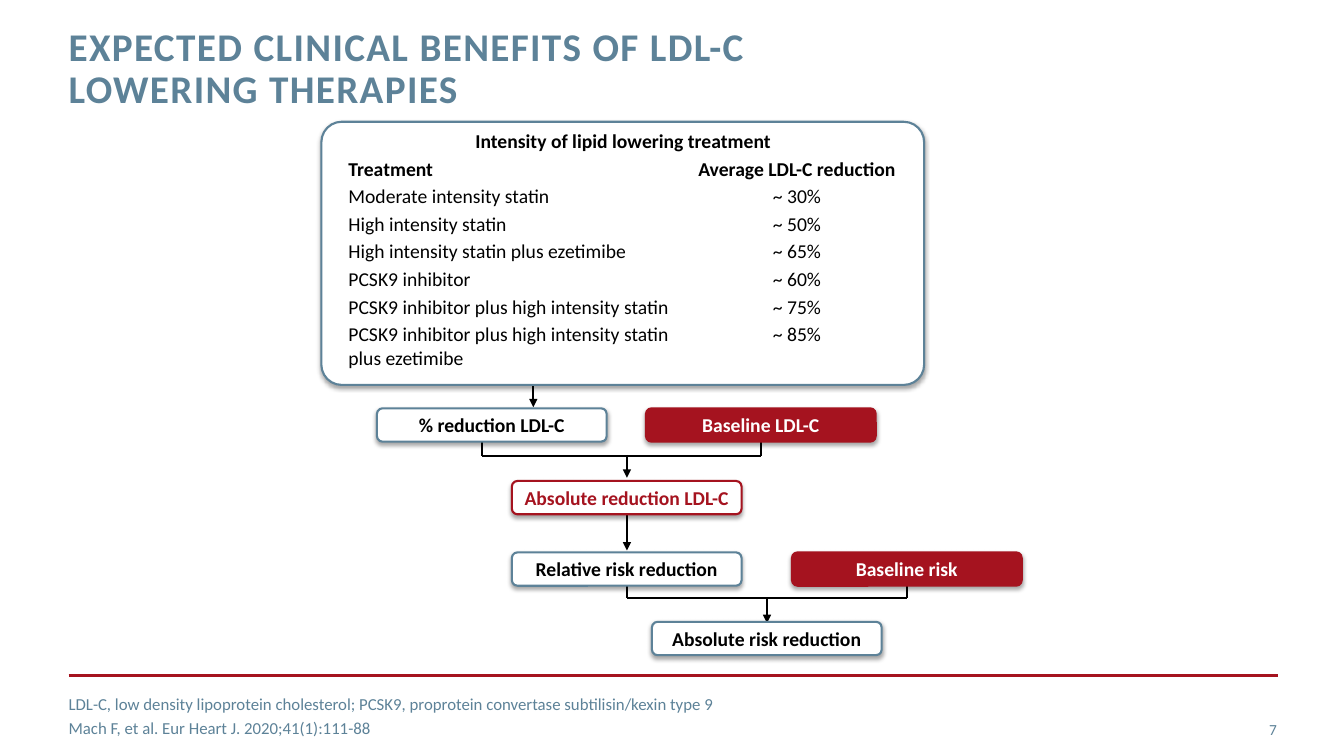
from lxml.etree import SubElement
from pptx import Presentation
from pptx.dml.color import RGBColor
from pptx.enum.shapes import MSO_CONNECTOR, MSO_SHAPE
from pptx.enum.text import MSO_ANCHOR, PP_ALIGN
from pptx.oxml.ns import qn
from pptx.util import Cm, Pt

COLOURS = {"steel": "5D8298", "red": "A5131F", "black": "000000", "white": "FFFFFF"}
NO_GRID_STYLE = "{2D5ABB26-0587-4C30-8999-92F81FD0307C}"
BOX_WIDTH, BOX_HEIGHT = 5.79, 0.84


def colour(name):
    return RGBColor.from_string(COLOURS[name])


class SlideBuilder:
    font_name = "Calibri"

    def __init__(self, slide):
        self.slide = slide

    def add_runs(self, paragraph, text, size, text_colour, bold=False, align=PP_ALIGN.LEFT, spacing=0):
        paragraph.alignment = align
        for index, line in enumerate(text.split("\n")):
            if index:
                paragraph.add_line_break()
            run = paragraph.add_run()
            run.text = line
            run.font.name = self.font_name
            run.font.size = Pt(size)
            run.font.bold = bold
            run.font.color.rgb = colour(text_colour)
            if spacing:
                run.font._element.set("spc", str(spacing))

    def text(self, left, top, width, height, lines, size, anchor=MSO_ANCHOR.MIDDLE,
             line_spacing=None, space_before=0, **style):
        frame = self.slide.shapes.add_textbox(Cm(left), Cm(top), Cm(width), Cm(height)).text_frame
        frame.word_wrap = True
        frame.vertical_anchor = anchor
        frame.margin_left = frame.margin_right = frame.margin_top = frame.margin_bottom = 0
        for index, line in enumerate(lines):
            paragraph = frame.add_paragraph() if index else frame.paragraphs[0]
            if index:
                paragraph.space_before = Pt(space_before)
            if line_spacing:
                paragraph.line_spacing = Pt(line_spacing)
            self.add_runs(paragraph, line, size, "steel", **style)

    def box(self, left, top, width=BOX_WIDTH, height=BOX_HEIGHT, text="", fill="white",
            line="steel", text_colour="black", corner=0.167):
        shape = self.slide.shapes.add_shape(
            MSO_SHAPE.ROUNDED_RECTANGLE, Cm(left), Cm(top), Cm(width), Cm(height))
        shape.adjustments[0] = corner
        shape.fill.solid()
        shape.fill.fore_color.rgb = colour(fill)
        shape.line.color.rgb = colour(line)
        shape.line.width = Pt(1.5)
        self.shadow(shape)
        if text:
            frame = shape.text_frame
            frame.word_wrap = True
            frame.vertical_anchor = MSO_ANCHOR.MIDDLE
            frame.margin_top = frame.margin_bottom = Cm(0.08)
            self.add_runs(frame.paragraphs[0], text, 14, text_colour, True, PP_ALIGN.CENTER)

    def shadow(self, shape):
        shape.shadow.inherit = False
        effects = shape._element.spPr.find(qn("a:effectLst"))
        outer = SubElement(effects, qn("a:outerShdw"), blurRad=str(Pt(3.1)), dist=str(Pt(1.8)),
                           dir="5400000", rotWithShape="0")
        shade = SubElement(outer, qn("a:srgbClr"), val=COLOURS["black"])
        SubElement(shade, qn("a:alpha"), val="35000")

    def line(self, x1, y1, x2, y2, line_colour="black", width=1.5, arrow=False):
        connector = self.slide.shapes.add_connector(
            MSO_CONNECTOR.STRAIGHT, Cm(x1), Cm(y1), Cm(x2), Cm(y2))
        connector.line.color.rgb = colour(line_colour)
        connector.line.width = Pt(width)
        if arrow:
            outline = connector._element.spPr.find(qn("a:ln"))
            SubElement(outline, qn("a:tailEnd"), type="triangle")
        SubElement(connector._element.spPr, qn("a:effectLst"))

    def bracket(self, left, right, top, bar):
        self.line(left, bar, right, bar)
        for x in (left, right):
            self.line(x, bar, x, top)

    def table(self, left, top, column_widths, row_height, heading, rows):
        shape = self.slide.shapes.add_table(
            len(rows) + 1, len(column_widths), Cm(left), Cm(top),
            Cm(sum(column_widths)), Cm(row_height * (len(rows) + 1)))
        table = shape.table
        table._tbl.tblPr.find(qn("a:tableStyleId")).text = NO_GRID_STYLE
        table.first_row = table.horz_banding = False
        for column, width in zip(table.columns, column_widths):
            column.width = Cm(width)
        for row in table.rows:
            row.height = Cm(row_height)
            for cell in row.cells:
                cell.fill.background()
                cell.margin_left = cell.margin_right = Cm(0.25)
                cell.margin_top = cell.margin_bottom = Cm(0.05)
        title_cell = table.cell(0, 0)
        title_cell.merge(table.cell(0, len(column_widths) - 1))
        self.add_runs(title_cell.text_frame.paragraphs[0], heading, 14, "black", True, PP_ALIGN.CENTER)
        for row_index, values in enumerate(rows, 1):
            for column_index, value in enumerate(values):
                frame = table.cell(row_index, column_index).text_frame
                align = PP_ALIGN.CENTER if column_index else PP_ALIGN.LEFT
                for index, text in enumerate(value.split("\n")):
                    paragraph = frame.add_paragraph() if index else frame.paragraphs[0]
                    self.add_runs(paragraph, text, 14, "black", row_index == 1, align)


TREATMENTS = [
    ("Treatment", "Average LDL-C reduction"),
    ("Moderate intensity statin", "~ 30%"),
    ("High intensity statin", "~ 50%"),
    ("High intensity statin plus ezetimibe", "~ 65%"),
    ("PCSK9 inhibitor", "~ 60%"),
    ("PCSK9 inhibitor plus high intensity statin", "~ 75%"),
    ("PCSK9 inhibitor plus high intensity statin\nplus ezetimibe", "~ 85%"),
]
OUTLINED = {}
BASELINE = {"fill": "red", "line": "red", "text_colour": "white"}
HIGHLIGHT = {"line": "red", "text_colour": "red"}
STEPS = [
    (9.5, 10.29, "% reduction LDL-C", OUTLINED),
    (16.28, 10.29, "Baseline LDL-C", BASELINE),
    (12.9, 12.12, "Absolute reduction LDL-C", HIGHLIGHT),
    (12.9, 13.92, "Relative risk reduction", OUTLINED),
    (19.96, 13.92, "Baseline risk", BASELINE),
    (16.43, 15.67, "Absolute risk reduction", OUTLINED),
]
ARROWS = [(13.44, 9.3, 10.26), (15.8, 11.46, 12.04), (15.8, 12.9, 13.87), (19.33, 15.06, 15.7)]
BRACKETS = [(12.14, 19.18, 11.1, 11.48), (15.8, 22.86, 14.68, 15.06)]


def main():
    presentation = Presentation()
    presentation.slide_width, presentation.slide_height = Cm(33.87), Cm(19.05)
    builder = SlideBuilder(presentation.slides.add_slide(presentation.slide_layouts[6]))
    builder.line(1.73, 17.02, 32.21, 17.02, "red", 2)
    builder.text(1.73, 0.69, 24.28, 2.24, ["EXPECTED CLINICAL BENEFITS OF LDL-C \nLOWERING THERAPIES"],
                 28, MSO_ANCHOR.TOP, line_spacing=30, bold=True, spacing=100)
    builder.text(1.73, 17.53, 22.56, 1.02, [
        "LDL-C, low density lipoprotein cholesterol; PCSK9, proprotein convertase subtilisin/kexin type 9",
        "Mach F, et al. Eur Heart J. 2020;41(1):111-88"], 12, space_before=3)
    builder.text(30, 17.86, 2.18, 1.02, ["7"], 11, align=PP_ALIGN.RIGHT)
    for x, start, end in ARROWS:
        builder.line(x, start, x, end, arrow=True)
    for left, right, top, bar in BRACKETS:
        builder.bracket(left, right, top, bar)
    builder.box(8.1, 3.07, 15.19, 6.63, corner=0.077)
    for left, top, text, style in STEPS:
        builder.box(left, top, text=text, **style)
    builder.table(8.53, 3.23, [8.76, 5.59], 0.61, "Intensity of lipid lowering treatment", TREATMENTS)
    presentation.save("out.pptx")


if __name__ == "__main__":
    main()
